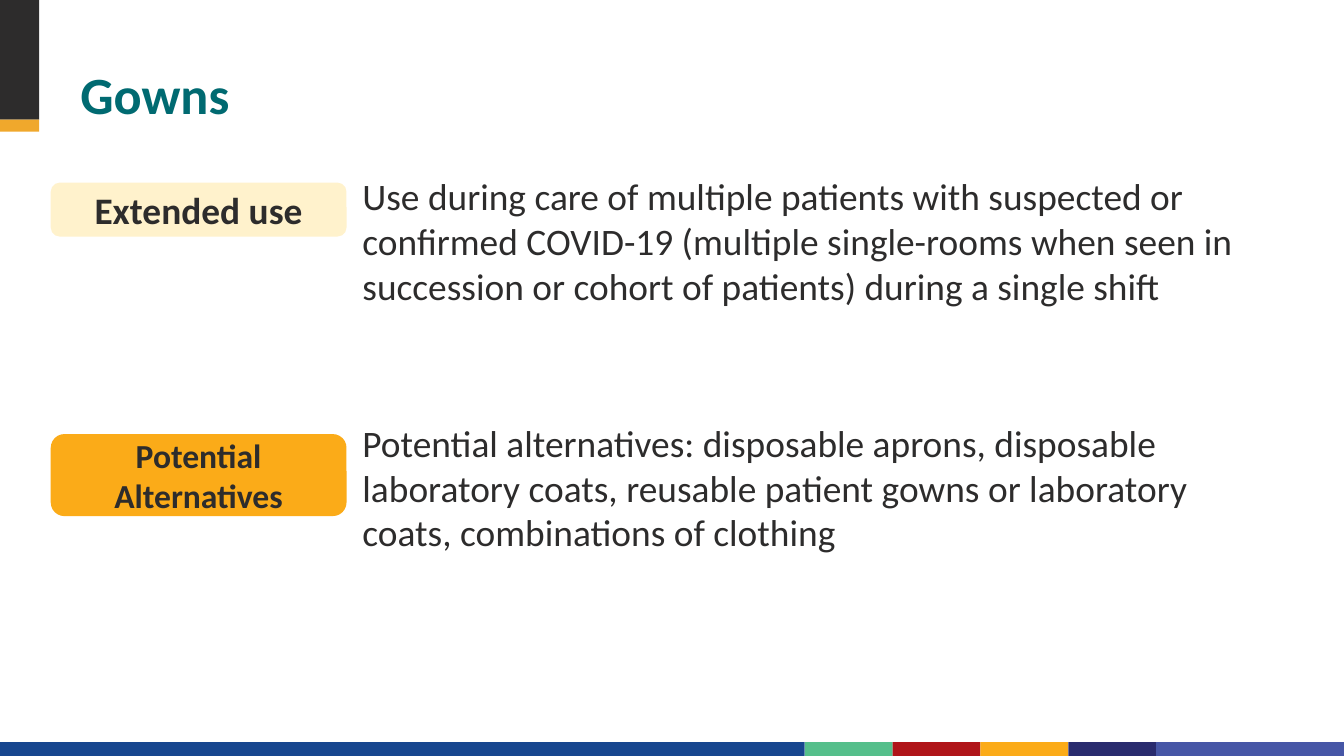
from dataclasses import dataclass

from pptx import Presentation
from pptx import util as u
from pptx.dml import color
from pptx.enum import shapes, text

FONT = "Calibri"
DARK = "2D2C2C"
TEAL = "006A71"
AMBER = "FBAB18"
SLIDE_WIDTH, SLIDE_HEIGHT = 25.4, 14.28
STRIPE_TOP = 14.02


@dataclass
class Box:
    left: float
    top: float
    width: float
    height: float

    def lengths(self) -> list[u.Length]:
        return [u.Cm(value) for value in (self.left, self.top, self.width, self.height)]


@dataclass
class Stripe:
    width: float
    fill: str


@dataclass
class Label:
    wording: str
    top: float
    height: float
    size: int
    fill: str


STRIPES = [
    Stripe(15.21, "17468F"),
    Stripe(1.66, "55BF8B"),
    Stripe(1.66, "B01519"),
    Stripe(1.66, AMBER),
    Stripe(1.66, "292B6E"),
    Stripe(3.55, "4656A6"),
]

LABELS = [
    Label("Extended use", 3.45, 1.02, 20, "FFF2CC"),
    Label("Potential Alternatives", 8.2, 1.55, 18, AMBER),
]

DESCRIPTIONS = [
    "Use during care of multiple patients with suspected or confirmed COVID-19 "
    "(multiple single-rooms when seen in succession or cohort of patients) during a single shift",
    "Potential alternatives: disposable aprons, disposable laboratory coats, "
    "reusable patient gowns or laboratory coats, combinations of clothing",
]


def rgb(value: str) -> color.RGBColor:
    return color.RGBColor.from_string(value)


def add_block(slide, kind, box: Box, fill: str):
    shape = slide.shapes.add_shape(kind, *box.lengths())
    shape.shadow.inherit = False
    shape.fill.solid()
    shape.fill.fore_color.rgb = rgb(fill)
    shape.line.fill.background()
    return shape


def format_runs(paragraph, size: int, ink: str, bold: bool = False) -> None:
    for run in paragraph.runs:
        run.font.name = FONT
        run.font.size = u.Pt(size)
        run.font.bold = bold
        run.font.color.rgb = rgb(ink)


def add_text_box(slide, box: Box, wording: str):
    frame = slide.shapes.add_textbox(*box.lengths()).text_frame
    frame.word_wrap = True
    frame.text = wording
    return frame


def add_title(slide, wording: str) -> None:
    frame = add_text_box(slide, Box(1.27, 0.58, 22.86, 1.91), wording)
    frame.vertical_anchor = text.MSO_ANCHOR.BOTTOM
    paragraph = frame.paragraphs[0]
    paragraph.line_spacing = u.Pt(30)
    format_runs(paragraph, 28, TEAL, bold=True)


def add_descriptions(slide, descriptions: list[str]) -> None:
    frame = add_text_box(slide, Box(6.6, 3.15, 17.73, 10.03), "\n".join(descriptions))
    for paragraph in frame.paragraphs:
        format_runs(paragraph, 20, DARK)
    for paragraph in frame.paragraphs[1:]:
        paragraph.space_before = u.Pt(60)


def add_label(slide, label: Label) -> None:
    box = Box(0.96, label.top, 5.59, label.height)
    shape = add_block(slide, shapes.MSO_SHAPE.ROUNDED_RECTANGLE, box, label.fill)
    frame = shape.text_frame
    frame.word_wrap = True
    frame.vertical_anchor = text.MSO_ANCHOR.MIDDLE
    frame.text = label.wording
    paragraph = frame.paragraphs[0]
    paragraph.alignment = text.PP_ALIGN.CENTER
    format_runs(paragraph, label.size, DARK, bold=True)


def add_stripes(slide, stripes: list[Stripe]) -> None:
    left = 0.0
    for stripe in stripes:
        box = Box(left, STRIPE_TOP, stripe.width, SLIDE_HEIGHT - STRIPE_TOP)
        add_block(slide, shapes.MSO_SHAPE.RECTANGLE, box, stripe.fill)
        left += stripe.width


def main() -> None:
    presentation = Presentation()
    presentation.slide_width = u.Cm(SLIDE_WIDTH)
    presentation.slide_height = u.Cm(SLIDE_HEIGHT)
    slide = presentation.slides.add_slide(presentation.slide_layouts[6])

    add_stripes(slide, STRIPES)
    add_block(slide, shapes.MSO_SHAPE.RECTANGLE, Box(0, 0, 0.74, 2.26), DARK)
    add_block(slide, shapes.MSO_SHAPE.RECTANGLE, Box(0, 2.26, 0.74, 0.23), "F0A82C")
    add_title(slide, "Gowns")
    add_descriptions(slide, DESCRIPTIONS)
    for label in LABELS:
        add_label(slide, label)

    presentation.save("out.pptx")


if __name__ == "__main__":
    main()
